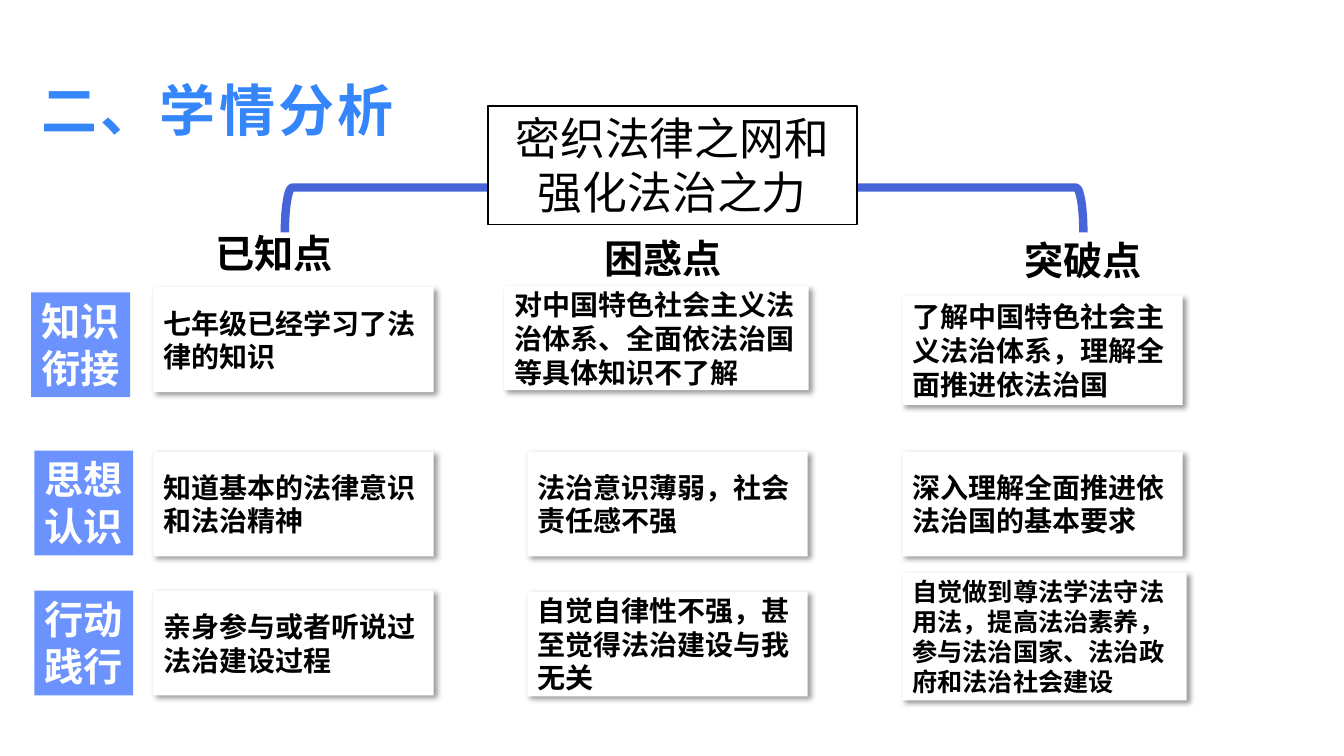
from dataclasses import dataclass

from lxml import etree
from pptx import Presentation
from pptx.dml.color import RGBColor
from pptx.enum.shapes import MSO_SHAPE
from pptx.enum.text import MSO_ANCHOR, PP_ALIGN
from pptx.oxml.ns import qn
from pptx.util import Pt

PX = 9144  # 100 px to the inch
RECTANGLE, BRACE = MSO_SHAPE.RECTANGLE, MSO_SHAPE.LEFT_BRACE
TOP, MIDDLE = MSO_ANCHOR.TOP, MSO_ANCHOR.MIDDLE
LEFT, CENTER = PP_ALIGN.LEFT, PP_ALIGN.CENTER


@dataclass(frozen=True)
class Theme:
    title_blue: str = "3586FB"
    brace_blue: str = "4765D8"
    label_blue: str = "6C92FD"
    ink: str = "000000"
    paper: str = "FFFFFF"
    heading_font: str = "Noto Sans CJK SC"
    card_font: str = "Calibri"
    label_font: str = "Arial"
    title_size: int = 40
    topic_size: int = 32
    heading_size: int = 28
    card_size: int = 20
    small_card_size: int = 18


THEME = Theme()

TITLE = "二、学情分析"
TOPIC = "密织法律之网和强化法治之力"
HEADINGS = [
    ("已知点", (174, 223, 195, 57)),
    ("困惑点", (560, 228, 195, 57)),
    ("突破点", (977, 230, 195, 57)),
]
# Each row: label, label box, then one (text, box, size) per heading
ROWS = [
    ("知识衔接", (31, 290, 98, 104), [
        ("七年级已经学习了法律的知识", (152, 285, 278, 104), THEME.card_size),
        ("对中国特色社会主义法治体系、全面依法治国等具体知识不了解",
         (500, 284, 302, 103), THEME.card_size),
        ("了解中国特色社会主义法治体系，理解全面推进依法治国",
         (895, 293, 278, 109), THEME.card_size),
    ]),
    ("思想认识", (34, 447, 98, 104), [
        ("知道基本的法律意识和法治精神", (152, 448, 278, 104), THEME.card_size),
        ("法治意识薄弱，社会责任感不强", (523, 448, 278, 104), THEME.card_size),
        ("深入理解全面推进依法治国的基本要求",
         (895, 448, 278, 104), THEME.card_size),
    ]),
    ("行动践行", (34, 586, 98, 104), [
        ("亲身参与或者听说过法治建设过程",
         (152, 586, 278, 104), THEME.card_size),
        ("自觉自律性不强，甚至觉得法治建设与我无关",
         (523, 587, 278, 104), THEME.card_size),
        ("自觉做到尊法学法守法用法，提高法治素养，参与法治国家、法治政府和法治社会建设",
         (895, 568, 282, 127), THEME.small_card_size),
    ]),
]


def emu(box):
    return [length * PX for length in box]


def write(shape, text, font, size, color, bold=True, align=LEFT, anchor=TOP):
    frame = shape.text_frame
    frame.word_wrap = True
    frame.vertical_anchor = anchor
    frame.text = text
    paragraph = frame.paragraphs[0]
    paragraph.alignment = align
    run = paragraph.runs[0]
    run.font.name = font
    run.font.size = Pt(size)
    run.font.bold = bold
    run.font.color.rgb = RGBColor.from_string(color)
    east_asian = etree.SubElement(run.font._element, qn("a:ea"))
    east_asian.set("typeface", font)
    return run


def add_panel(slide, box, fill, outline=None):
    panel = slide.shapes.add_shape(RECTANGLE, *emu(box))
    panel.shadow.inherit = False
    panel.fill.solid()
    panel.fill.fore_color.rgb = RGBColor.from_string(fill)
    if outline:
        panel.line.color.rgb = RGBColor.from_string(outline)
        panel.line.width = Pt(1)
    else:
        panel.line.fill.background()
    return panel


def cast_shadow(shape):
    effects = shape._element.spPr.find(qn("a:effectLst"))
    shadow = etree.SubElement(
        effects, qn("a:outerShdw"), blurRad=str(Pt(4)), dist=str(Pt(3)),
        dir=str(45 * 60000), algn="tl", rotWithShape="0")
    tint = etree.SubElement(shadow, qn("a:srgbClr"), val=THEME.ink)
    etree.SubElement(tint, qn("a:alpha"), val="40000")


def add_title(slide, box):
    title = slide.shapes.add_textbox(*emu(box))
    frame = title.text_frame
    frame.margin_left = frame.margin_right = 7 * PX
    frame.margin_top = frame.margin_bottom = 3 * PX
    run = write(title, TITLE, THEME.heading_font, THEME.title_size,
                THEME.title_blue, anchor=MIDDLE)
    run.font._element.set("spc", "240")


def add_brace(slide, box):
    """Fit a left brace into the box, turned so that its tip points up."""
    left, top, width, height = box
    inset = (width - height) // 2
    brace = slide.shapes.add_shape(
        BRACE, *emu((left + inset, top - inset, height, width)))
    brace.rotation = 90
    brace.shadow.inherit = False
    brace.fill.background()
    brace.line.color.rgb = RGBColor.from_string(THEME.brace_blue)
    brace.line.width = Pt(6)


def add_topic(slide, box):
    topic = add_panel(slide, box, THEME.paper, THEME.ink)
    write(topic, TOPIC, THEME.card_font, THEME.topic_size, THEME.ink,
          bold=False, align=CENTER)


def add_heading(slide, box, text):
    heading = slide.shapes.add_textbox(*emu(box))
    write(heading, text, THEME.heading_font, THEME.heading_size, THEME.ink,
          align=CENTER)


def add_label(slide, box, text):
    label = add_panel(slide, box, THEME.label_blue)
    write(label, text, THEME.label_font, THEME.heading_size, THEME.paper)


def add_card(slide, box, text, size):
    card = add_panel(slide, box, THEME.paper)
    cast_shadow(card)
    write(card, text, THEME.card_font, size, THEME.ink, anchor=MIDDLE)


def main():
    deck = Presentation()
    deck.slide_width, deck.slide_height = emu((1333, 750))
    slide = deck.slides.add_slide(deck.slide_layouts[6])

    add_title(slide, (34, 67, 867, 83))
    add_brace(slide, (283, 141, 792, 89))
    add_topic(slide, (484, 105, 366, 118))
    for heading, box in HEADINGS:
        add_heading(slide, box, heading)
    for label, label_box, cards in ROWS:
        add_label(slide, label_box, label)
        for text, box, size in cards:
            add_card(slide, box, text, size)

    deck.save("out.pptx")


if __name__ == "__main__":
    main()
